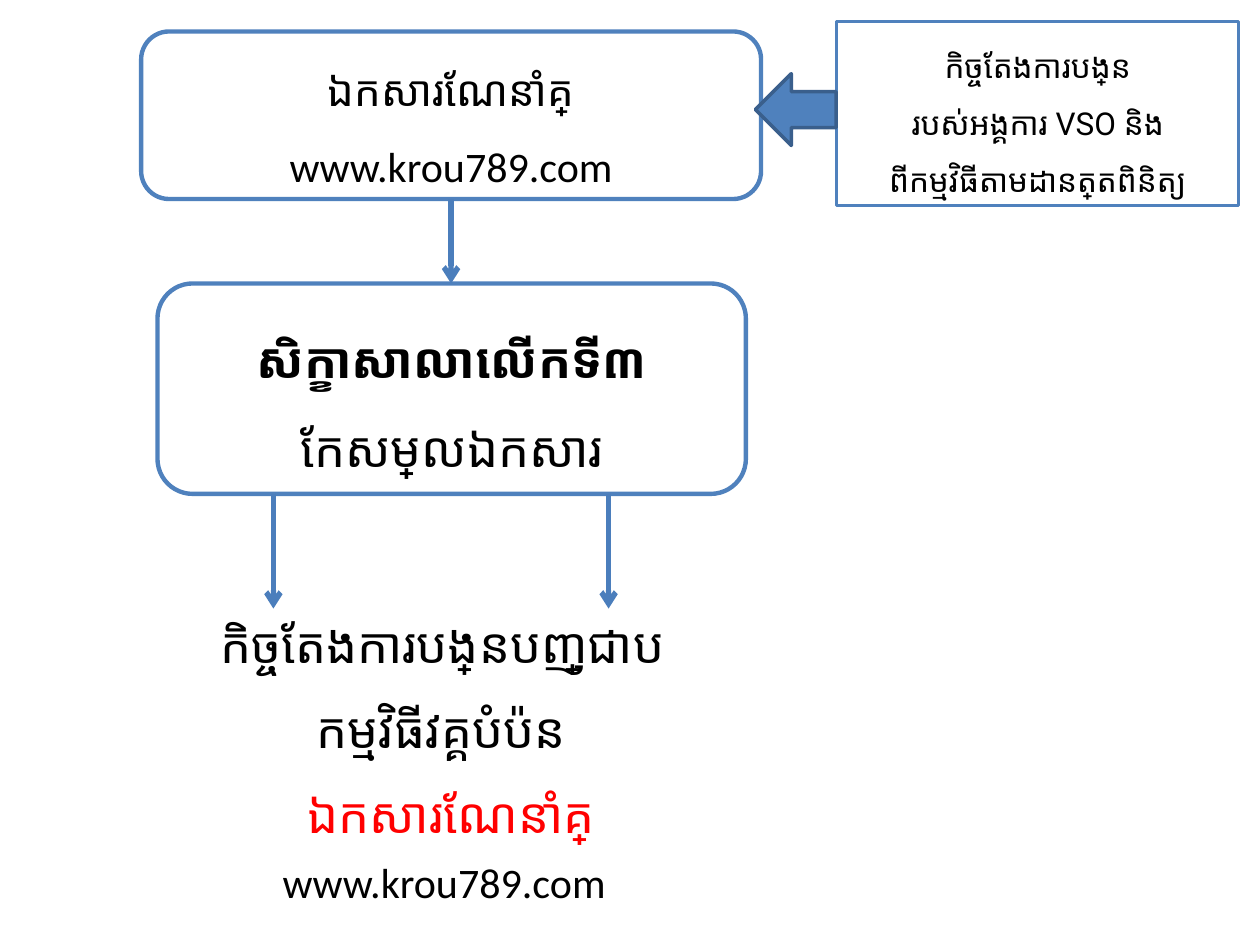
from dataclasses import dataclass

from lxml import etree
from pptx import Presentation
from pptx.dml.color import RGBColor
from pptx.enum.shapes import MSO_CONNECTOR, MSO_SHAPE
from pptx.enum.text import MSO_ANCHOR, MSO_AUTO_SIZE, PP_ALIGN
from pptx.oxml.ns import qn
from pptx.util import Inches, Pt

ROUND = MSO_SHAPE.FLOWCHART_ALTERNATE_PROCESS
RECT = MSO_SHAPE.RECTANGLE
DOWN = MSO_SHAPE.DOWN_ARROW
STRAIGHT = MSO_CONNECTOR.STRAIGHT
MIDDLE = MSO_ANCHOR.MIDDLE
TOP = MSO_ANCHOR.TOP
GROW = MSO_AUTO_SIZE.SHAPE_TO_FIT_TEXT
CENTER = PP_ALIGN.CENTER

BLUE, EDGE, STEM = "4F81BD", "3A5F8C", "4B7EBC"
WHITE, BLACK, RED = "FFFFFF", "000000", "FF0000"
GUIDE = "ឯកសារណែនាំគ្រូ"
SITE = "www.krou789.com"


@dataclass
class Box:
    kind: MSO_SHAPE
    at: tuple[float, float, float, float]
    lines: tuple[str, ...]
    size: int
    font: str
    weight: float
    inset: float = 0.04
    bold: int = 0


@dataclass
class Label:
    at: tuple[float, float, float, float]
    words: str
    size: int = 28
    color: str = BLACK
    wrap: bool = False


@dataclass
class Arrow:
    x: float
    top: float
    end: float


BOXES = [
    Box(ROUND, (1.25, 2.25, 4.67, 1.67), ("សិក្ខាសាលាលើកទី៣", "កែសម្រួលឯកសារ"),
        28, "Roboto", 2.5, bold=1),
    Box(ROUND, (1.12, 0.25, 4.92, 1.33), (GUIDE, SITE), 24, "Calibri", 2.5),
    Box(RECT, (6.64, 0.17, 3.19, 1.46),
        ("កិច្ចតែងការបង្រៀន", "របស់អង្គការ VSO និង", "ពីកម្មវិធីតាមដានត្រួតពិនិត្យ"),
        18, "Roboto", 2, inset=0.05),
]
ARROWS = [Arrow(3.58, 1.58, 2.25), Arrow(2.17, 3.92, 4.83), Arrow(4.83, 3.92, 4.83)]
LABELS = [
    Label((1.1, 4.83, 4.82, 0.57), "កិច្ចតែងការបង្រៀនបញ្រ្ជាប"),
    Label((1, 5.5, 5, 0.57), "កម្មវិធីវគ្គបំប៉ន", wrap=True),
    Label((1.99, 6.18, 3.18, 0.57), GUIDE, color=RED),
    Label((2.13, 6.75, 2.79, 0.5), SITE, size=24),
]


def tint(code: str) -> RGBColor:
    return RGBColor.from_string(code)


def style(para, size: int, font: str, color: str, bold: bool = False) -> None:
    para.alignment = CENTER
    for run in para.runs:
        run.font.size = Pt(size)
        run.font.name = font
        run.font.bold = bold
        run.font.color.rgb = tint(color)


def add_form(slide, kind: MSO_SHAPE, at: tuple, fill: str, line: str, weight: float):
    form = slide.shapes.add_shape(kind, *map(Inches, at))
    form.shadow.inherit = False
    form.fill.solid()
    form.fill.fore_color.rgb = tint(fill)
    form.line.color.rgb = tint(line)
    form.line.width = Pt(weight)
    return form


def draw_box(slide, box: Box) -> None:
    form = add_form(slide, box.kind, box.at, WHITE, BLUE, box.weight)
    frame = form.text_frame
    frame.word_wrap = True
    frame.vertical_anchor = MIDDLE
    frame.margin_top = frame.margin_bottom = Inches(box.inset)
    frame.margin_left = frame.margin_right = Inches(box.inset)
    frame.text = "\n".join(box.lines)
    for i, para in enumerate(frame.paragraphs):
        para.line_spacing = 1.5
        style(para, box.size, box.font, BLACK, i < box.bold)


def draw_arrow(slide, arrow: Arrow) -> None:
    x = Inches(arrow.x)
    link = slide.shapes.add_connector(STRAIGHT, x, Inches(arrow.top), x, Inches(arrow.end))
    link.line.color.rgb = tint(STEM)
    link.line.width = Pt(3)
    etree.SubElement(link.line._get_or_add_ln(), qn("a:tailEnd"), type="arrow")
    etree.SubElement(link._element.spPr, qn("a:effectLst"))


def draw_label(slide, label: Label) -> None:
    frame = slide.shapes.add_textbox(*map(Inches, label.at)).text_frame
    frame.word_wrap = label.wrap
    frame.auto_size = GROW
    frame.vertical_anchor = TOP
    frame.text = label.words
    style(frame.paragraphs[0], label.size, "Calibri", label.color)


def main() -> None:
    deck = Presentation()
    deck.slide_width, deck.slide_height = Inches(10), Inches(7.5)
    slide = deck.slides.add_slide(deck.slide_layouts[6])
    for box in BOXES:
        draw_box(slide, box)
    for arrow in ARROWS:
        draw_arrow(slide, arrow)
    for label in LABELS:
        draw_label(slide, label)
    block = add_form(slide, DOWN, (6.03, 0.55, 0.57, 0.64), BLUE, EDGE, 2)
    block.rotation = 90
    deck.save("out.pptx")


if __name__ == "__main__":
    main()
